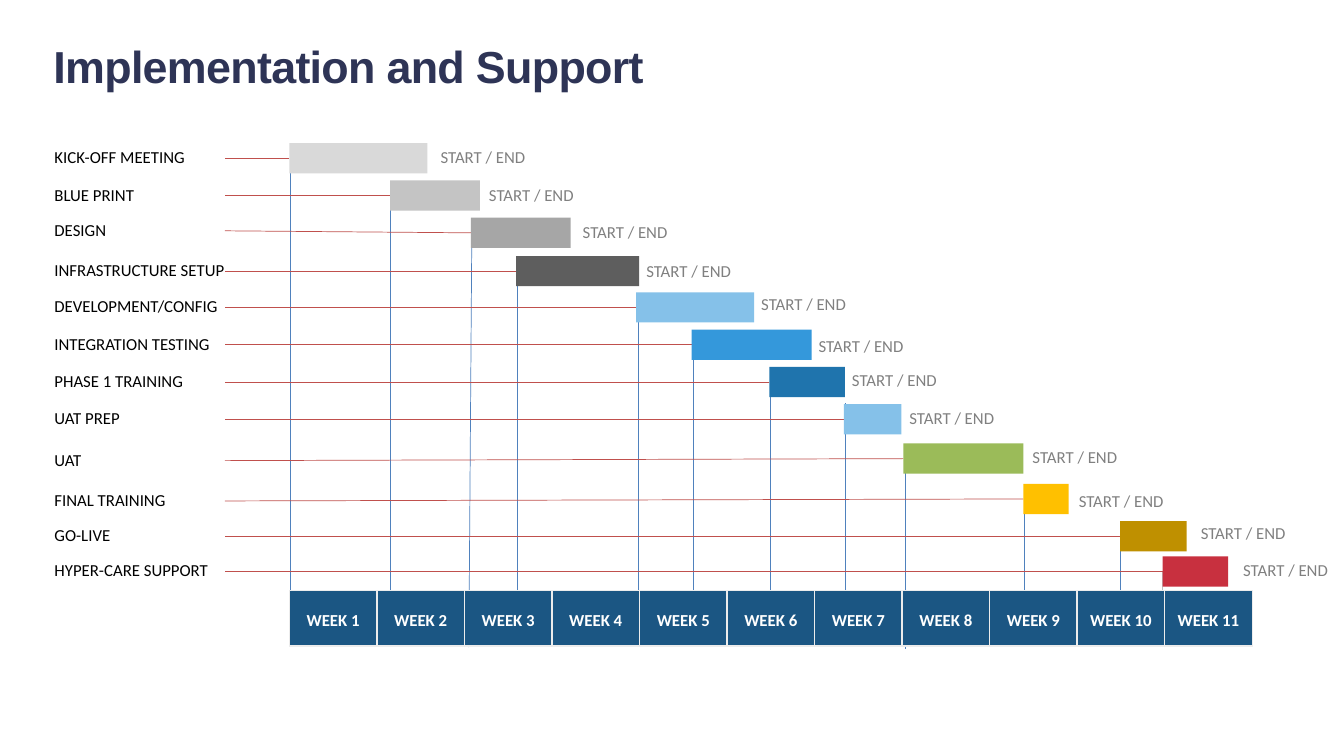
from dataclasses import dataclass

from lxml import etree
from pptx import Presentation
from pptx.dml.color import RGBColor
from pptx.enum.shapes import MSO_CONNECTOR as CONNECTOR, MSO_SHAPE as SHAPE
from pptx.enum.text import MSO_ANCHOR as ANCHOR, PP_ALIGN as ALIGN
from pptx.oxml.ns import qn
from pptx.util import Inches, Pt


@dataclass(frozen=True)
class Theme:
    title: str = "2E3456"
    label: str = "000000"
    note: str = "808080"
    leader: str = "C0504D"
    drop: str = "4F81BD"
    last_drop: str = "C0C0C0"
    week: str = "1B5683"
    week_edge: str = "ECECEC"
    week_text: str = "FFFFFF"
    title_font: str = "Arial"
    body_font: str = "Calibri"
    title_size: int = 32
    body_size: int = 12


@dataclass(frozen=True)
class Task:
    name: str
    label_top: float
    bar_left: float
    bar_top: float
    bar_width: float
    color: str
    note: tuple
    drop_start: tuple
    drop_end: tuple


THEME = Theme()
LABEL_LEFT, LABEL_WIDTH = 0.54, 1.7
LEADER_LEFT = 2.23
ROW_HEIGHT = 0.3
WEEK_COUNT = 11
WEEKS_LEFT, WEEKS_RIGHT = 2.87, 12.42
WEEKS_TOP, WEEK_HEIGHT = 5.86, 0.55

TASKS = [
    Task("KICK-OFF MEETING", 1.42, 2.87, 1.42, 1.37, "D9D9D9",
         (4.37, 1.42, 1.03), (2.88, 1.57), (2.88, 6.42)),
    Task("BLUE PRINT", 1.79, 3.87, 1.79, 0.89, "C4C4C4",
         (4.85, 1.8, 2.24), (3.87, 1.92), (3.87, 6.42)),
    Task("DESIGN", 2.14, 4.67, 2.16, 0.99, "A6A6A6",
         (5.78, 2.16, 0.96), (4.68, 2.27), (4.65, 6.42)),
    Task("INFRASTRUCTURE SETUP", 2.54, 5.12, 2.54, 1.22, "5E5E5E",
         (6.41, 2.55, 1.08), (5.13, 2.62), (5.13, 6.42)),
    Task("DEVELOPMENT/CONFIG", 2.9, 6.31, 2.9, 1.17, "85C1E9",
         (7.55, 2.88, 1.04), (6.33, 2.98), (6.33, 6.42)),
    Task("INTEGRATION TESTING", 3.27, 6.86, 3.27, 1.19, "3498DB",
         (8.12, 3.29, 0.97), (6.88, 3.33), (6.88, 6.42)),
    Task("PHASE 1 TRAINING", 3.64, 7.63, 3.64, 0.75, "1F74AD",
         (8.45, 3.63, 1.02), (7.64, 3.83), (7.64, 6.42)),
    Task("UAT PREP", 4.01, 8.37, 4.01, 0.57, "85C1E9",
         (9.02, 4.01, 0.96), (8.38, 4), (8.38, 6.39)),
    Task("UAT", 4.42, 8.96, 4.4, 1.19, "9BBB59",
         (10.24, 4.39, 1.04), (8.98, 4.49), (8.98, 6.44)),
    Task("FINAL TRAINING", 4.82, 10.15, 4.8, 0.45, "FFC000",
         (10.7, 4.83, 0.97), (10.16, 4.94), (10.16, 6.04)),
    Task("GO-LIVE", 5.17, 11.11, 5.17, 0.66, "BF9000",
         (11.91, 5.15, 1), (11.11, 5.32), (11.11, 6.42)),
    Task("HYPER-CARE SUPPORT", 5.52, 11.53, 5.52, 0.65, "C8303F",
         (12.33, 5.52, 0.95), (11.53, 5.67), (11.53, 6.42)),
]


def write(holder, text, color, size=THEME.body_size, font=THEME.body_font,
          bold=False, align=ALIGN.LEFT, anchor=ANCHOR.MIDDLE, leading=0.9,
          after=10, insets=(0, 0, 0, 0), tracking=0):
    frame = holder.text_frame
    frame.word_wrap = True
    frame.vertical_anchor = anchor
    (frame.margin_left, frame.margin_top,
     frame.margin_right, frame.margin_bottom) = map(Inches, insets)
    paragraph = frame.paragraphs[0]
    paragraph.alignment = align
    paragraph.line_spacing = leading
    paragraph.space_after = Pt(after)
    run = paragraph.add_run()
    run.text = text
    run.font.name = font
    run.font.size = Pt(size)
    run.font.bold = bold
    run.font.color.rgb = RGBColor.from_string(color)
    if tracking:
        run.font._element.set("spc", str(round(tracking * 100)))


def add_text(slide, left, top, width, height, text, **style):
    box = slide.shapes.add_textbox(*map(Inches, (left, top, width, height)))
    write(box, text, **style)


def add_block(slide, left, top, width, height, fill, edge=None):
    block = slide.shapes.add_shape(
        SHAPE.RECTANGLE, *map(Inches, (left, top, width, height)))
    block.shadow.inherit = False
    block.fill.solid()
    block.fill.fore_color.rgb = RGBColor.from_string(fill)
    if edge:
        block.line.color.rgb = RGBColor.from_string(edge)
        block.line.width = Pt(1)
    else:
        block.line.fill.background()
    return block


def add_line(slide, start, end, color, width=0.5):
    line = slide.shapes.add_connector(
        CONNECTOR.STRAIGHT, *map(Inches, (*start, *end)))
    line.line.color.rgb = RGBColor.from_string(color)
    line.line.width = Pt(width)
    etree.SubElement(line._element.spPr, qn("a:effectLst"))


def add_task_lines(slide, task):
    middle = ROW_HEIGHT / 2
    add_line(slide, (task.bar_left, task.bar_top + middle),
             (LEADER_LEFT, task.label_top + middle), THEME.leader)
    if task is TASKS[-1]:
        add_line(slide, task.drop_start, task.drop_end, THEME.last_drop, 0.75)
    else:
        add_line(slide, task.drop_start, task.drop_end, THEME.drop)


def add_task_texts(slide, task):
    add_text(slide, LABEL_LEFT, task.label_top, LABEL_WIDTH, ROW_HEIGHT,
             task.name, color=THEME.label)
    add_text(slide, *task.note, ROW_HEIGHT, "START / END", color=THEME.note)


def add_weeks(slide):
    width = (WEEKS_RIGHT - WEEKS_LEFT) / WEEK_COUNT
    for index in range(WEEK_COUNT):
        week = add_block(slide, WEEKS_LEFT + index * width, WEEKS_TOP, width,
                         WEEK_HEIGHT, THEME.week, THEME.week_edge)
        write(week, f"WEEK {index + 1}", THEME.week_text, bold=True,
              align=ALIGN.CENTER, leading=0.8, insets=(0.1, 0.12, 0.1, 0.05))


def main():
    deck = Presentation()
    deck.slide_width, deck.slide_height = Inches(13.33), Inches(7.5)
    slide = deck.slides.add_slide(deck.slide_layouts[6])
    add_text(slide, 0.53, 0.38, 10.58, 1.25, "Implementation and Support",
             color=THEME.title, size=THEME.title_size, font=THEME.title_font,
             bold=True, anchor=ANCHOR.TOP, leading=1.0, after=0, tracking=-0.5)
    for task in TASKS:
        add_task_lines(slide, task)
    for task in TASKS:
        add_task_texts(slide, task)
    add_weeks(slide)
    for task in TASKS:
        add_block(slide, task.bar_left, task.bar_top, task.bar_width,
                  ROW_HEIGHT, task.color)
    deck.save("out.pptx")


if __name__ == "__main__":
    main()
